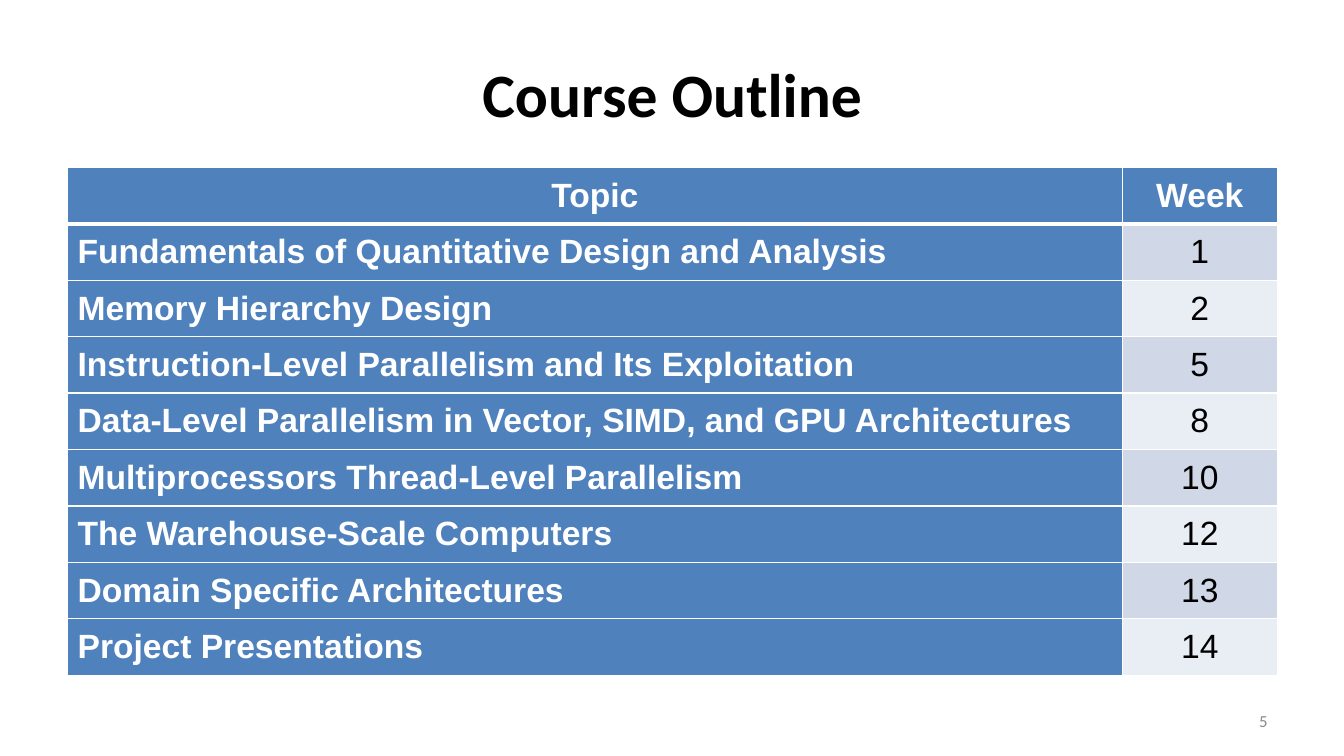
"""Build the course outline slide with its table of topics and weeks."""
import pptx
import pptx.dml.color
import pptx.enum.text
import pptx.oxml
import pptx.oxml.ns
import pptx.util

Inches = pptx.util.Inches
Pt = pptx.util.Pt
ALIGN = pptx.enum.text.PP_ALIGN
MIDDLE = pptx.enum.text.MSO_ANCHOR.MIDDLE

TITLE = "Course Outline"
NUMBER = "5"
ROWS = [
    ("Topic", "Week"),
    ("Fundamentals of Quantitative Design and Analysis", "1"),
    ("Memory Hierarchy Design", "2"),
    ("Instruction-Level Parallelism and Its Exploitation", "5"),
    ("Data-Level Parallelism in Vector, SIMD, and GPU Architectures", "8"),
    ("Multiprocessors Thread-Level Parallelism", "10"),
    ("The Warehouse-Scale Computers", "12"),
    ("Domain Specific Architectures", "13"),
    ("Project Presentations", "14"),
]
WIDTHS = (10.46, 1.54)
HEIGHT = 0.56
BLUE, WHITE, BLACK, GRAY = "4F81BD", "FFFFFF", "000000", "898989"
BANDS = ("D0D8E8", "E9EDF4")


def color(code):
    return pptx.dml.color.RGBColor.from_string(code)


def write(frame, text, size, font, code, bold, align):
    para = frame.paragraphs[0]
    para.alignment = align
    run = para.add_run()
    run.text = text
    run.font.size = Pt(size)
    run.font.name = font
    run.font.bold = bold
    run.font.color.rgb = color(code)


def label(slide, box, *style):
    frame = slide.shapes.add_textbox(*map(Inches, box)).text_frame
    frame.word_wrap = True
    frame.vertical_anchor = MIDDLE
    write(frame, *style)


def border(cell, row):
    props = cell._tc.get_or_add_tcPr()
    sides = {"L": 1, "R": 1, "T": 3 if row == 1 else 1, "B": 3 if row == 0 else 1}
    for spot, (side, width) in enumerate(sides.items()):
        line = pptx.oxml.parse_xml(
            f'<a:ln{side} {pptx.oxml.ns.nsdecls("a")} w="{Pt(width)}">'
            f'<a:solidFill><a:srgbClr val="{WHITE}"/></a:solidFill></a:ln{side}>'
        )
        props.insert(spot, line)


def fill(cell, text, row, col):
    head, topic = row == 0, col == 0
    strong = head or topic
    cell.margin_left = Inches(0.1 if topic and not head else 0)
    cell.margin_right = cell.margin_top = cell.margin_bottom = 0
    cell.vertical_anchor = MIDDLE
    cell.fill.solid()
    cell.fill.fore_color.rgb = color(BLUE if strong else BANDS[(row - 1) % 2])
    align = ALIGN.LEFT if topic and not head else ALIGN.CENTER
    write(cell.text_frame, text, 24, "Arial", WHITE if strong else BLACK, strong, align)
    border(cell, row)


def main():
    deck = pptx.Presentation()
    deck.slide_width, deck.slide_height = Inches(13.33), Inches(7.5)
    slide = deck.slides.add_slide(deck.slide_layouts[6])
    label(slide, (0.67, 0.3, 12, 1.25), TITLE, 44, "Calibri", BLACK, True, ALIGN.CENTER)
    box = (0.67, 1.66, sum(WIDTHS), HEIGHT * len(ROWS))
    table = slide.shapes.add_table(len(ROWS), len(WIDTHS), *map(Inches, box)).table
    for col, width in enumerate(WIDTHS):
        table.columns[col].width = Inches(width)
    for row, texts in enumerate(ROWS):
        table.rows[row].height = Inches(HEIGHT)
        for col, text in enumerate(texts):
            fill(table.cell(row, col), text, row, col)
    label(slide, (9.56, 6.95, 3.11, 0.4), NUMBER, 12, "Calibri", GRAY, False, ALIGN.RIGHT)
    deck.save("out.pptx")


if __name__ == "__main__":
    main()
